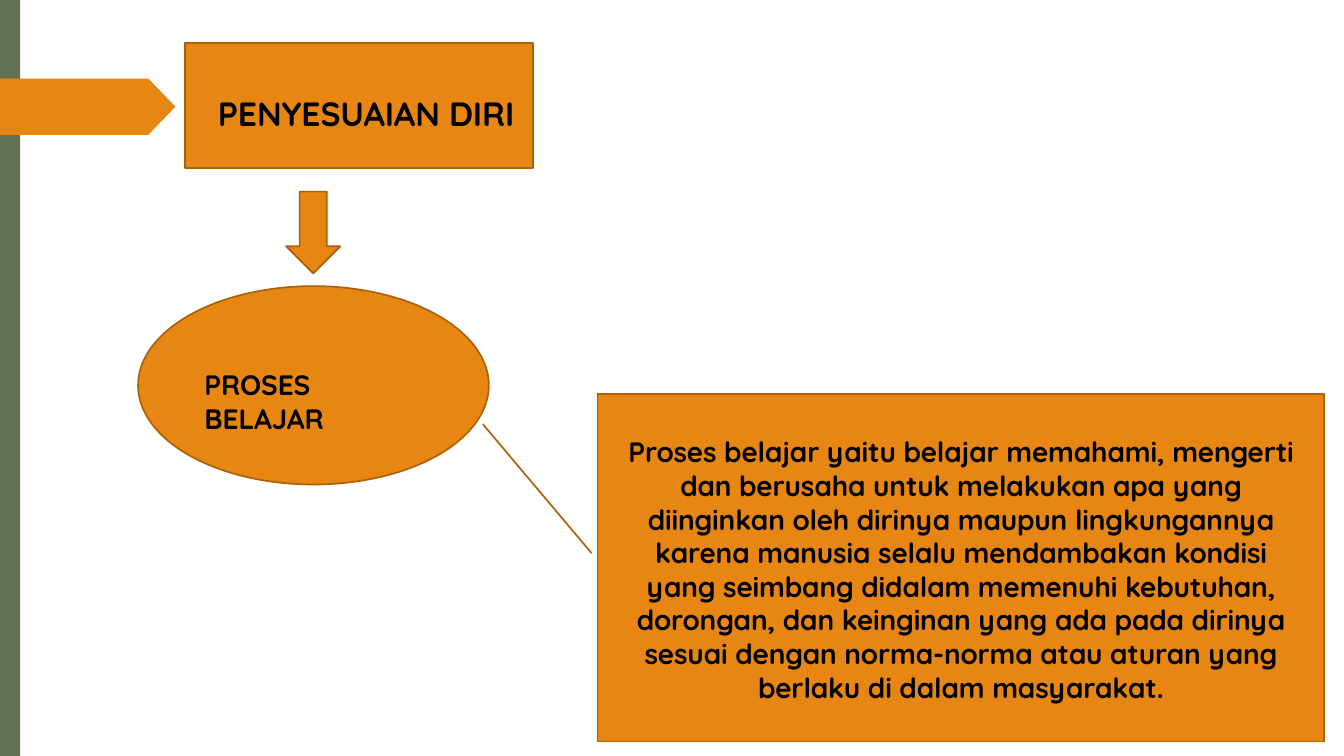
from pptx import Presentation
from pptx.dml.color import RGBColor
from pptx.enum.shapes import MSO_CONNECTOR, MSO_SHAPE as Shape
from pptx.enum.text import MSO_ANCHOR, MSO_AUTO_SIZE, PP_ALIGN as Align
from pptx.oxml.ns import qn
from pptx.util import Cm, Pt
from lxml.etree import SubElement

TITLE = "PENYESUAIAN DIRI"
PROCESS = "PROSES BELAJAR"
EXPLANATION = (
    "Proses belajar yaitu belajar memahami, mengerti dan berusaha untuk "
    "melakukan apa yang diinginkan oleh dirinya maupun lingkungannya karena "
    "manusia selalu mendambakan kondisi yang seimbang didalam memenuhi "
    "kebutuhan, dorongan, dan keinginan yang ada pada dirinya sesuai dengan "
    "norma-norma atau aturan yang berlaku di dalam masyarakat."
)

ORANGE, BROWN, GREEN, BLACK = "E78612", "AA6109", "637152", "000000"
FONT = "Quicksand"
LINE_WIDTH = Pt(1.2)

# Left, top, width, height in centimetres
SIDE_BAR = (0, 0, 0.51, 19.05)
TAG = (0, 1.98, 4.42, 1.42)
TITLE_BOX = (4.67, 1.09, 8.76, 3.15)
ARROW = (7.21, 4.83, 1.37, 2.06)
ELLIPSE = (3.48, 7.21, 8.84, 5)
EXPLANATION_BOX = (15.06, 9.93, 18.31, 8.76)
# Start x, start y, end x, end y in centimetres
LINK = (12.17, 10.69, 14.91, 13.94)


def color(value):
    return RGBColor.from_string(value)


def paint(shape, fill, line=None):
    shape.fill.solid()
    shape.fill.fore_color.rgb = color(fill)
    if line:
        shape.line.color.rgb = color(line)
        shape.line.width = LINE_WIDTH
    else:
        shape.line.fill.background()


def add_shape(page, kind, place, fill=ORANGE, line=BROWN):
    shape = page.shapes.add_shape(kind, *map(Cm, place))
    shape.shadow.inherit = False
    paint(shape, fill, line)
    return shape


def write(shape, text, size, align, left, top, right):
    """Put text at the top of the shape, with left, top and right insets in cm."""
    frame = shape.text_frame
    settings = {
        "margin_left": Cm(left), "margin_top": Cm(top),
        "margin_right": Cm(right), "margin_bottom": 0,
        "vertical_anchor": MSO_ANCHOR.TOP, "word_wrap": True,
        "auto_size": MSO_AUTO_SIZE.NONE,
    }
    for name, value in settings.items():
        setattr(frame, name, value)
    para = frame.paragraphs[0]
    para.alignment = align
    span = para.add_run()
    span.text = text
    for name, value in {"name": FONT, "size": Pt(size), "bold": True}.items():
        setattr(span.font, name, value)
    span.font.color.rgb = color(BLACK)
    span.font._element.set("spc", "-10")


def add_link(page):
    link = page.shapes.add_connector(MSO_CONNECTOR.STRAIGHT, *map(Cm, LINK))
    link.line.color.rgb = color(BROWN)
    link.line.width = LINE_WIDTH
    SubElement(link._element.spPr, qn("a:effectLst"))


def main():
    deck = Presentation()
    deck.slide_width, deck.slide_height = Cm(33.87), Cm(19.05)
    page = deck.slides.add_slide(deck.slide_layouts[5])

    title = page.shapes.title
    title.left, title.top, title.width, title.height = map(Cm, TITLE_BOX)
    paint(title, ORANGE, BROWN)
    write(title, TITLE, 24, Align.LEFT, 0.82, 1.24, 0)

    add_shape(page, Shape.RECTANGLE, SIDE_BAR, GREEN, None)
    tag = add_shape(page, Shape.PENTAGON, TAG, line=None)
    tag.adjustments[0] = 0.48

    add_shape(page, Shape.DOWN_ARROW, ARROW)
    process = add_shape(page, Shape.OVAL, ELLIPSE)
    write(process, PROCESS, 20, Align.LEFT, 0.38, 1.33, 0.8)
    add_link(page)
    explanation = add_shape(page, Shape.RECTANGLE, EXPLANATION_BOX)
    write(explanation, EXPLANATION, 20, Align.CENTER, 0.64, 1.03, 0.64)

    deck.save("out.pptx")


if __name__ == "__main__":
    main()
